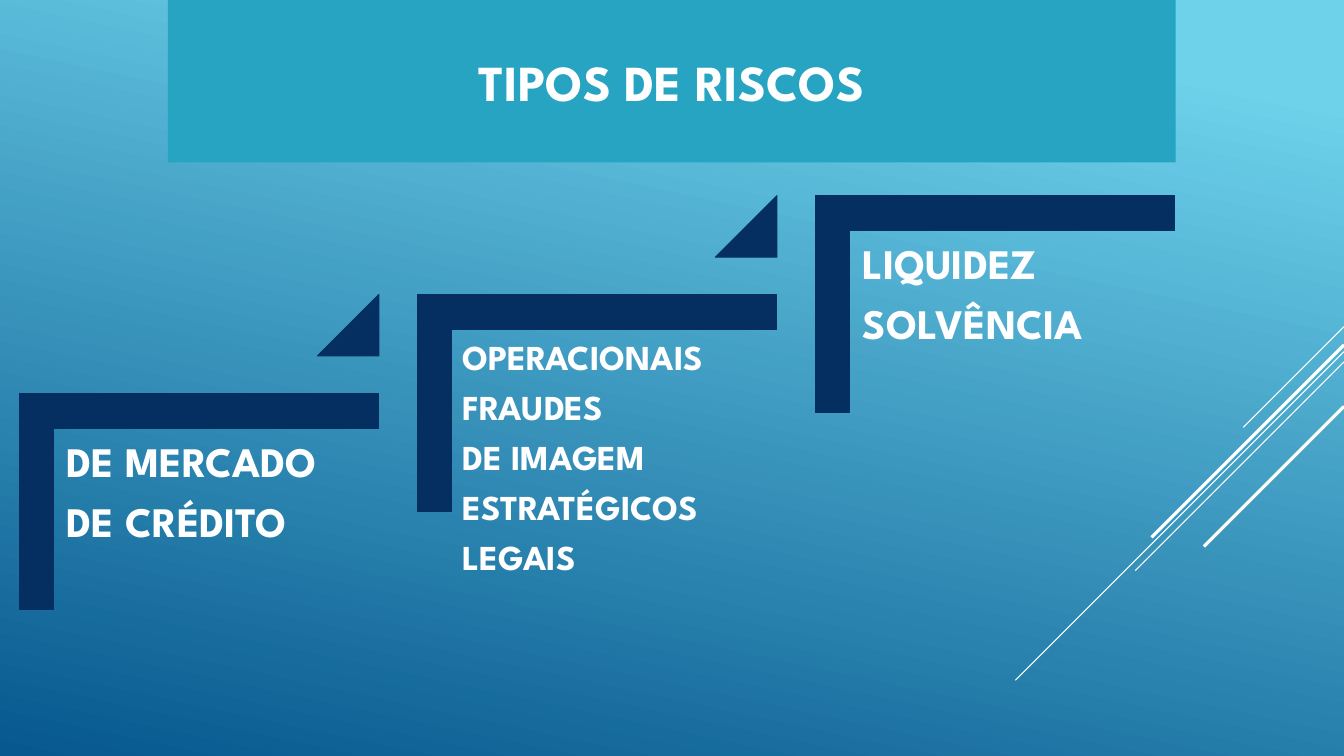
from lxml.etree import SubElement
from pptx import Presentation
from pptx.dml.color import RGBColor
from pptx.enum.shapes import MSO_CONNECTOR, MSO_SHAPE
from pptx.enum.text import MSO_ANCHOR as Anchor, PP_ALIGN as Align
from pptx.oxml.ns import qn
from pptx.util import Cm, Pt

FONT = "League Spartan"
WHITE, NAVY, TEAL = "FFFFFF", "052F61", "26A4C2"
WIDTH, HEIGHT = 33.87, 19.05

# Staircase: texts, font size and text inset of each step, from low to high
STEPS = [
    (["DE MERCADO", "DE CRÉDITO"], 30, 0.3),
    (["OPERACIONAIS", "FRAUDES", "DE IMAGEM", "ESTRATÉGICOS", "LEGAIS"], 25, 0.25),
    (["LIQUIDEZ", "SOLVÊNCIA"], 30, 0.3),
]
STEP_RIGHT, STEP_UP = 10.03, 2.49

# Diagonals from the right edge: start height, extent, line width
DIAGONALS = [(8.23, 2.54, 0.75), (8.86, 8.28, 0.75), (9.12, 5.26, 0.75),
             (8.69, 4.85, 2.25), (10.24, 3.53, 2.25)]


def color(value):
    return RGBColor.from_string(value)


def write_text(shape, lines, size, inset=0.25, align=Align.LEFT,
               anchor=Anchor.TOP, line_spacing=None, after_percent=None):
    frame = shape.text_frame
    frame.word_wrap = True
    frame.vertical_anchor = anchor
    frame.margin_left = frame.margin_right = Cm(inset)
    frame.margin_top = frame.margin_bottom = Cm(inset)
    for index, line in enumerate(lines):
        paragraph = frame.add_paragraph() if index else frame.paragraphs[0]
        paragraph.alignment = align
        if line_spacing:
            paragraph.line_spacing = line_spacing
        if after_percent:
            # Spacing as a share of the text size needs XML
            paragraph.space_after = Pt(0)
            spacing = paragraph._p.pPr.find(qn("a:spcAft"))
            spacing.remove(spacing[0])
            SubElement(spacing, qn("a:spcPct"), val=str(after_percent * 1000))
        run = paragraph.add_run()
        run.text = line
        run.font.name = FONT
        run.font.size = Pt(size)
        run.font.bold = True
        run.font.color.rgb = color(WHITE)


def add_navy_shape(slide, kind, left, top, width, height):
    shape = slide.shapes.add_shape(kind, Cm(left), Cm(top), Cm(width), Cm(height))
    shape.shadow.inherit = False
    shape.fill.solid()
    shape.fill.fore_color.rgb = color(NAVY)
    shape.line.color.rgb = color(NAVY)
    shape.line.width = Pt(0.75)
    return shape


def add_background(slide):
    fill = slide.background.fill
    fill.gradient()
    fill.gradient_angle = 258
    for stop, (position, value) in zip(fill.gradient_stops, [(0.1, "6ED2EB"), (1, "06588E")]):
        stop.position = position
        stop.color.rgb = color(value)


def add_diagonals(slide, right):
    for top, extent, weight in DIAGONALS:
        line = slide.shapes.add_connector(
            MSO_CONNECTOR.STRAIGHT, Cm(right), Cm(top), Cm(right - extent), Cm(top + extent))
        line.line.color.rgb = color(WHITE)
        line.line.width = Pt(weight)
        SubElement(line._element.spPr, qn("a:effectLst"))


def add_title(slide, left, top, width, height):
    title = slide.shapes.title
    title.left, title.top, title.width, title.height = map(Cm, (left, top, width, height))
    title.fill.solid()
    title.fill.fore_color.rgb = color(TEAL)
    write_text(title, ["TIPOS DE RISCOS"], 36, align=Align.CENTER, anchor=Anchor.MIDDLE)


def add_step(slide, left, top, width, height, lines, size, inset, has_next):
    # Corner bracket, turned a quarter about its centre
    shift = (width - height) / 2
    bracket = add_navy_shape(slide, MSO_SHAPE.CORNER, left + shift, top - shift, height, width)
    bracket.rotation = 90
    bracket.adjustments[0] = bracket.adjustments[1] = 0.161

    # Risk names inside the bracket
    arm = 0.9
    box = slide.shapes.add_textbox(Cm(left + arm), Cm(top + arm), Cm(width - arm), Cm(7.19))
    write_text(box, lines, size, inset=inset, line_spacing=0.9, after_percent=35)

    # Triangle pointing up to the next step
    if has_next:
        side = 1.55
        triangle = add_navy_shape(slide, MSO_SHAPE.ISOSCELES_TRIANGLE,
                                  left + width - side, top - STEP_UP, side, side)
        triangle.adjustments[0] = 1


def add_staircase(slide, left, top):
    for index, (lines, size, inset) in enumerate(STEPS):
        add_step(slide, left + index * STEP_RIGHT, top - index * STEP_UP, 9.07, 5.46,
                 lines, size, inset, has_next=index < len(STEPS) - 1)


def main():
    presentation = Presentation()
    presentation.slide_width, presentation.slide_height = Cm(WIDTH), Cm(HEIGHT)
    slide = presentation.slides.add_slide(presentation.slide_layouts[5])
    add_background(slide)
    add_diagonals(slide, WIDTH)
    add_title(slide, 4.23, 0, 25.4, 4.09)
    add_staircase(slide, 0.48, 9.91)
    presentation.save("out.pptx")


if __name__ == "__main__":
    main()
